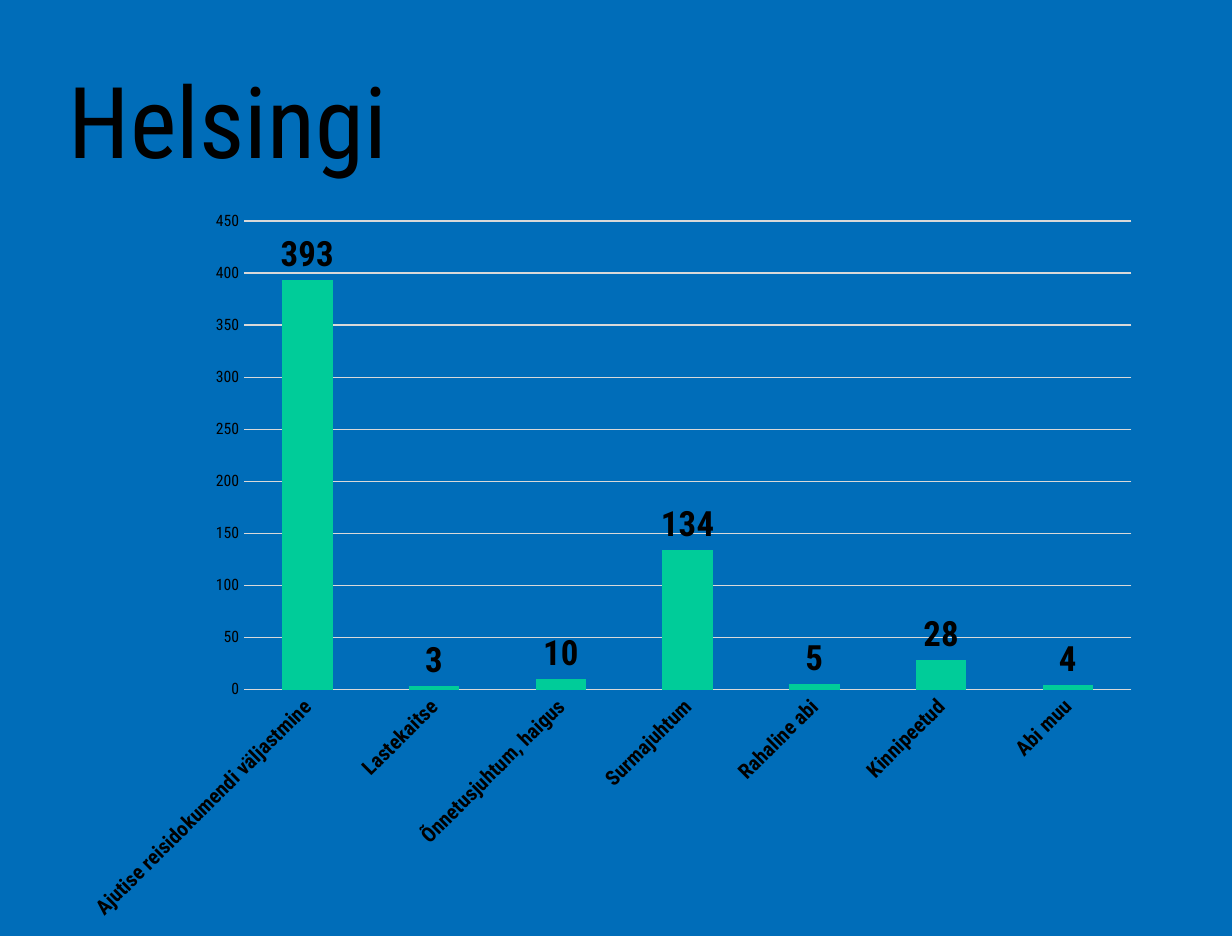
from typing import NamedTuple

from lxml.etree import SubElement
from pptx import Presentation
from pptx.chart.chart import Chart
from pptx.chart.data import CategoryChartData
from pptx.dml.color import RGBColor
from pptx.enum.chart import XL_CHART_TYPE, XL_LABEL_POSITION, XL_TICK_MARK
from pptx.enum.text import MSO_ANCHOR
from pptx.oxml.ns import qn
from pptx.slide import Slide
from pptx.text.text import Font
from pptx.util import Cm, Pt

SLIDE_WIDTH, SLIDE_HEIGHT = Cm(25), Cm(19)
FONT_NAME = "Roboto Condensed"
COLORS = {
    "background": "006DB9",
    "text": "000000",
    "bar": "00CC99",
    "gridline": "D9D9D9",
}


class Area(NamedTuple):
    """A rectangle in percent of the space that holds it."""
    left: float
    top: float
    width: float
    height: float

    def on_slide(self) -> tuple[int, int, int, int]:
        return (
            round(self.left * SLIDE_WIDTH / 100),
            round(self.top * SLIDE_HEIGHT / 100),
            round(self.width * SLIDE_WIDTH / 100),
            round(self.height * SLIDE_HEIGHT / 100),
        )


class CaseCount(NamedTuple):
    category: str
    count: int


TITLE_AREA = Area(5.59, 4.38, 88, 18.45)
CHART_AREA = Area(5.59, 21, 88, 79)
PLOT_AREA = Area(16.15, 3.3, 81.85, 63.4)

CASE_COUNTS = [
    CaseCount("Ajutise reisidokumendi väljastmine", 393),
    CaseCount("Lastekaitse", 3),
    CaseCount("Õnnetusjuhtum, haigus", 10),
    CaseCount("Surmajuhtum", 134),
    CaseCount("Rahaline abi", 5),
    CaseCount("Kinnipeetud", 28),
    CaseCount("Abi muu", 4),
]


def color(name: str) -> RGBColor:
    return RGBColor.from_string(COLORS[name])


def style_font(font: Font, size: float, bold: bool = False) -> None:
    font.name = FONT_NAME
    font.size = Pt(size)
    font.bold = bold
    font.color.rgb = color("text")


def add_title(slide: Slide, text: str) -> None:
    frame = slide.shapes.add_textbox(*TITLE_AREA.on_slide()).text_frame
    frame.word_wrap = True
    frame.vertical_anchor = MSO_ANCHOR.MIDDLE
    frame.margin_left = frame.margin_right = 0
    frame.margin_top = frame.margin_bottom = 0
    paragraph = frame.paragraphs[0]
    paragraph.text = text
    paragraph.line_spacing = 0.88
    style_font(paragraph.font, 57)


def place_plot(chart: Chart, area: Area) -> None:
    """Fix the inner plot area, leaving room for the slanted labels."""
    plot_area = chart.element.find(f".//{qn('c:plotArea')}")
    for old_layout in plot_area.findall(qn("c:layout")):
        plot_area.remove(old_layout)
    layout = SubElement(plot_area, qn("c:layout"))
    plot_area.insert(0, layout)
    manual = SubElement(layout, qn("c:manualLayout"))
    for tag, value in (("layoutTarget", "inner"), ("xMode", "edge"), ("yMode", "edge")):
        SubElement(manual, qn(f"c:{tag}")).set("val", value)
    for tag, percent in zip("xywh", area):
        SubElement(manual, qn(f"c:{tag}")).set("val", str(percent / 100))


def style_axes(chart: Chart) -> None:
    category_axis, value_axis = chart.category_axis, chart.value_axis
    for axis, size, bold in ((category_axis, 12, True), (value_axis, 9, False)):
        axis.major_tick_mark = axis.minor_tick_mark = XL_TICK_MARK.NONE
        axis.format.line.fill.background()
        style_font(axis.tick_labels.font, size, bold)

    label_body = chart.element.find(f".//{qn('c:catAx')}/{qn('c:txPr')}/{qn('a:bodyPr')}")
    label_body.set("rot", str(-45 * 60000))
    label_body.set("vert", "horz")

    value_axis.minimum_scale, value_axis.maximum_scale = 0, 450
    value_axis.major_unit = 50
    gridline = value_axis.major_gridlines.format.line
    gridline.color.rgb = color("gridline")
    gridline.width = Pt(0.75)


def add_case_chart(slide: Slide, cases: list[CaseCount]) -> None:
    data = CategoryChartData()
    data.categories = [case.category for case in cases]
    data.add_series("Series 1", [case.count for case in cases])
    chart = slide.shapes.add_chart(
        XL_CHART_TYPE.COLUMN_CLUSTERED, *CHART_AREA.on_slide(), data
    ).chart
    chart.has_title = chart.has_legend = False
    style_font(chart.font, 10)
    place_plot(chart, PLOT_AREA)
    style_axes(chart)

    plot = chart.plots[0]
    plot.gap_width = 150
    plot.vary_by_categories = False
    series = plot.series[0]
    series.format.fill.solid()
    series.format.fill.fore_color.rgb = color("bar")
    labels = series.data_labels
    labels.show_value = True
    labels.position = XL_LABEL_POSITION.OUTSIDE_END
    style_font(labels.font, 20, bold=True)


def main() -> None:
    presentation = Presentation()
    presentation.slide_width, presentation.slide_height = SLIDE_WIDTH, SLIDE_HEIGHT
    slide = presentation.slides.add_slide(presentation.slide_layouts[6])
    slide.background.fill.solid()
    slide.background.fill.fore_color.rgb = color("background")
    add_title(slide, "Helsingi")
    add_case_chart(slide, CASE_COUNTS)
    presentation.save("out.pptx")


if __name__ == "__main__":
    main()
